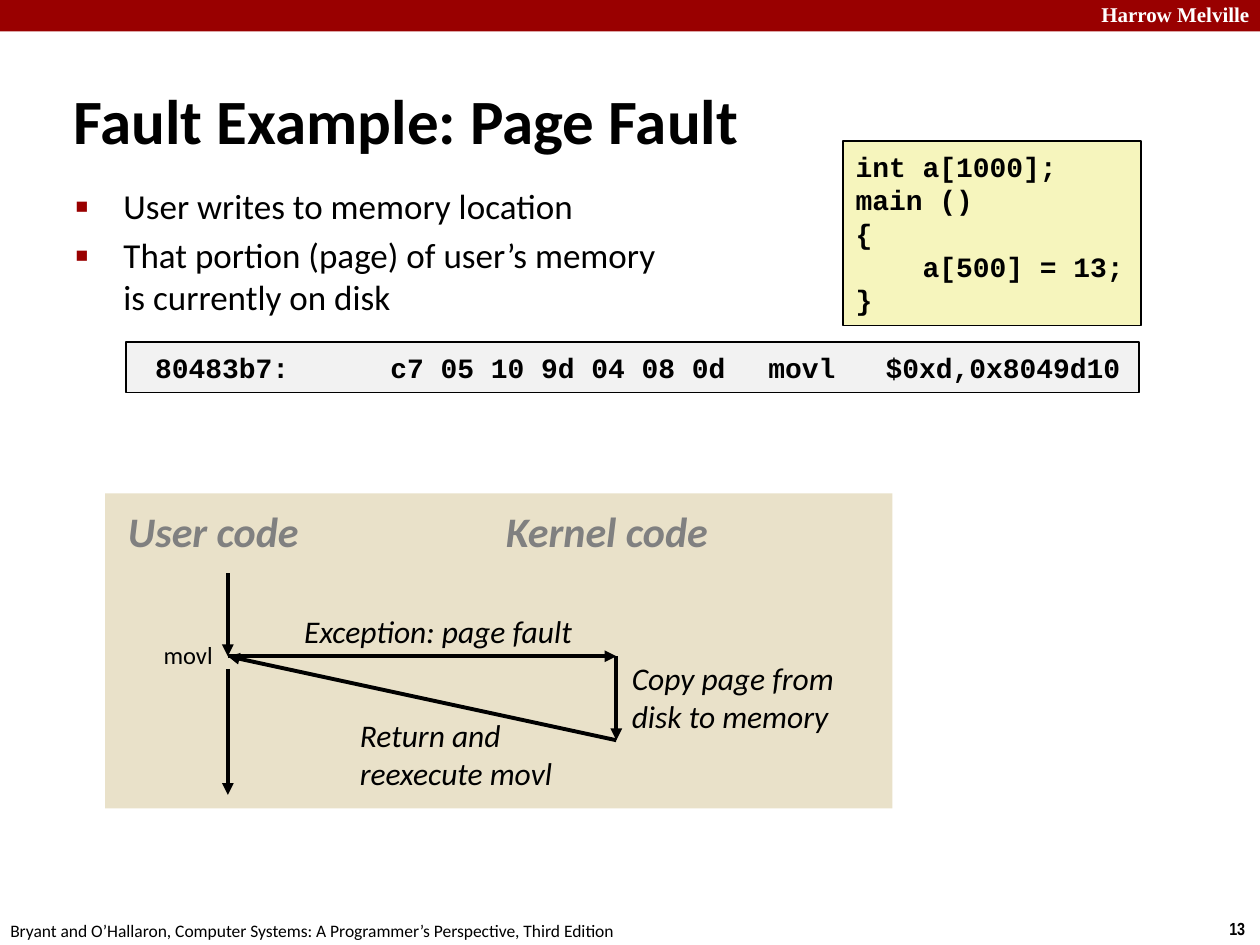
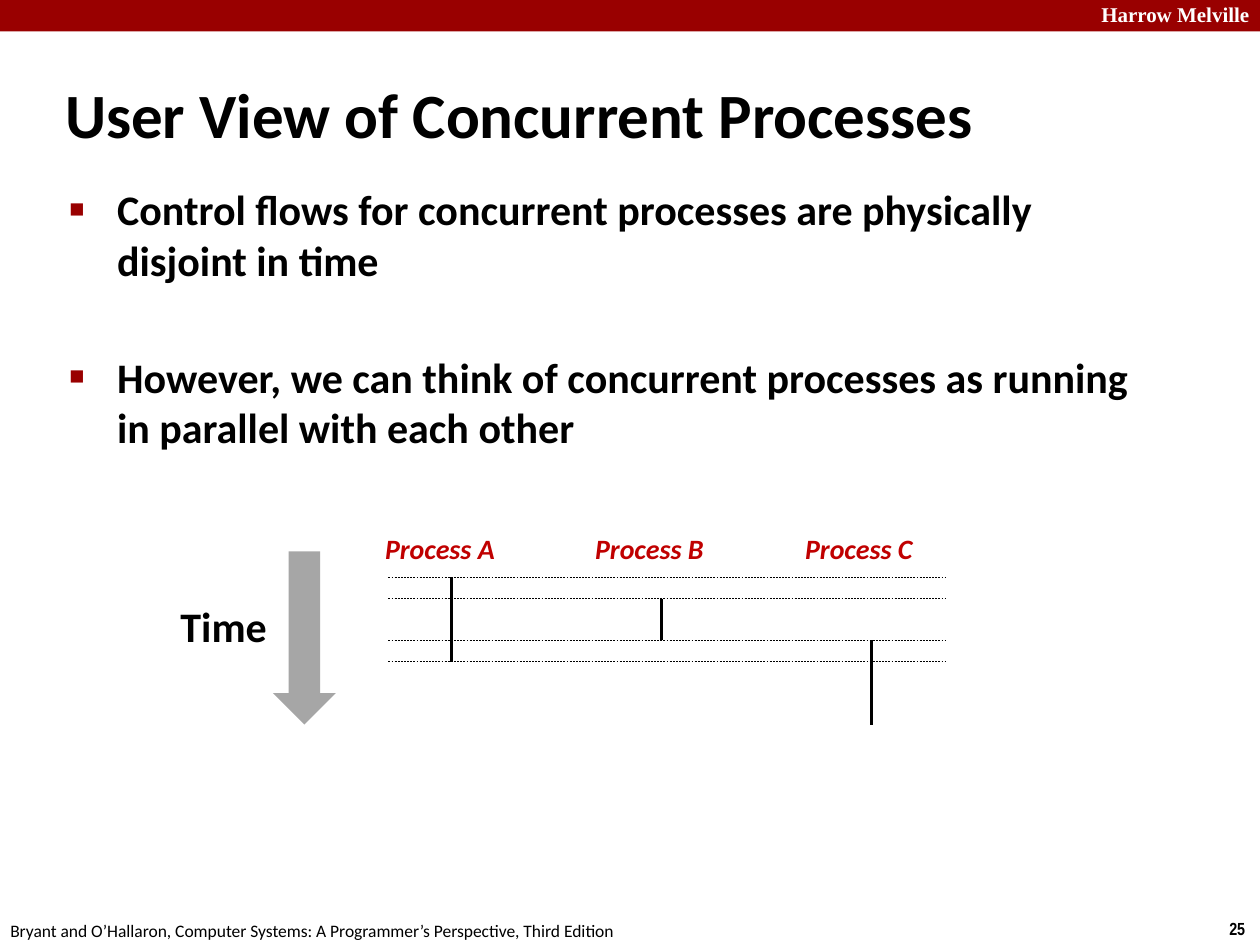
from lxml import etree
from pptx import Presentation
from pptx.dml.color import RGBColor
from pptx.enum.dml import MSO_LINE
from pptx.enum.shapes import MSO_CONNECTOR, MSO_SHAPE
from pptx.enum.text import MSO_ANCHOR, MSO_AUTO_SIZE, PP_ALIGN
from pptx.oxml.ns import qn
from pptx.util import Inches, Pt

RECT, DOWN = MSO_SHAPE.RECTANGLE, MSO_SHAPE.DOWN_ARROW
STRAIGHT, DASH = MSO_CONNECTOR.STRAIGHT, MSO_LINE.DASH
LEFT, TOP, MIDDLE = PP_ALIGN.LEFT, MSO_ANCHOR.TOP, MSO_ANCHOR.MIDDLE
FIT, FIXED = MSO_AUTO_SIZE.SHAPE_TO_FIT_TEXT, MSO_AUTO_SIZE.NONE

COLS, ROWS = 120, 90  # grid of 1/12 inch cells
SANS, MONO, SERIF, NARROW = "Calibri", "Courier New", "Times New Roman", "Arial Narrow"
BLACK, WHITE, RED, CRIMSON = "000000", "FFFFFF", "990000", "C00000"
GRAY, SILVER, PALE, SAND, CREAM = "808080", "A6A6A6", "F2F2F2", "E9E1C9", "F6F5BD"
SCHOOL = "Harrow Melville"
BOOK = ("Bryant and O’Hallaron, Computer Systems: "
        "A Programmer’s Perspective, Third Edition")


def rgb(code):
    return RGBColor.from_string(code)


def cell(n):
    return Inches(n / 12)


def sub(parent, tag, **attrs):
    return etree.SubElement(parent, qn(tag), attrs)


class Deck:
    """Holds the style and the current slide."""

    def __init__(self):
        self.prs = Presentation()
        self.prs.slide_width, self.prs.slide_height = cell(COLS), cell(ROWS)

    def page(self, num, title, area):
        """Start a slide with its band, footer and title."""
        self.slide = self.prs.slides.add_slide(self.prs.slide_layouts[1])
        self.shapes = self.slide.shapes
        self.box((0, 0, COLS, 3), RED)
        self.text((103.7, -0.4, 17.2, 3.6), SCHOOL, 12, WHITE, SERIF, bold=True, wrap=True)
        self.text((115.9, 86.8, 4.1, 3.2), str(num), 10, font=NARROW, bold=True)
        self.text((-0.2, 87, 61, 3.2), BOOK, 10)
        head = self.shapes.title
        self.place(head, area)
        head.text_frame.text = title
        self.style(head.text_frame, 36, bold=True)
        head.text_frame.vertical_anchor = MIDDLE

    def place(self, shape, area):
        shape.left, shape.top, shape.width, shape.height = map(cell, area)
        shape.text_frame.auto_size = FIXED

    def style(self, frame, size, color=BLACK, font=SANS, bold=False, ital=False):
        for par in frame.paragraphs:
            par.alignment = LEFT
            face = par.font
            face.name, face.size = font, Pt(size)
            face.bold, face.italic = bold, ital
            face.color.rgb = rgb(color)

    def text(self, area, text, size, color=BLACK, font=SANS, bold=False,
             ital=False, wrap=False):
        frame = self.shapes.add_textbox(*map(cell, area)).text_frame
        frame.word_wrap, frame.auto_size = wrap, FIT
        frame.text = text
        self.style(frame, size, color, font, bold, ital)

    def bullets(self, area, items, size, gap, bold=False):
        body = self.slide.placeholders[1]
        self.place(body, area)
        frame = body.text_frame
        frame.vertical_anchor = TOP
        frame.text = "\n".join(items)
        for i, par in enumerate(frame.paragraphs):
            props = par._p.get_or_add_pPr()
            props.set("marL", str(Inches(0.38)))
            props.set("indent", str(-Inches(0.38)))
            sub(sub(props, "a:buClr"), "a:srgbClr", val=RED)
            sub(props, "a:buSzPct", val="60000")
            sub(props, "a:buFont", typeface="Arial")
            sub(props, "a:buChar", char="■")
            par.space_before = Pt(gap if i else 0)
        self.style(frame, size, bold=bold)

    def box(self, area, fill, kind=RECT, edge=None):
        shape = self.shapes.add_shape(kind, *map(cell, area))
        shape.shadow.inherit = False
        shape.fill.solid()
        shape.fill.fore_color.rgb = rgb(fill)
        if edge:
            shape.line.color.rgb, shape.line.width = rgb(edge), Pt(1)
        else:
            shape.line.fill.background()
        return shape

    def code(self, area, text, fill, tabs=()):
        frame = self.box(area, fill, edge=BLACK).text_frame
        frame.word_wrap = False
        frame.text = text
        for par in frame.paragraphs:
            if tabs:
                stops = sub(par._p.get_or_add_pPr(), "a:tabLst")
                for pos in tabs:
                    sub(stops, "a:tab", pos=str(Inches(pos)), algn="l")
            par.line_spacing = Pt(19)
        self.style(frame, 16, font=MONO, bold=True)

    def line(self, start, end, width, arrow=False, dash=False):
        link = self.shapes.add_connector(STRAIGHT, *map(cell, (*start, *end)))
        link.line.color.rgb, link.line.width = rgb(BLACK), Pt(width)
        if dash:
            link.line.dash_style = DASH
        props = link._element.spPr
        if arrow:
            sub(props.find(qn("a:ln")), "a:tailEnd", type="triangle")
        sub(props, "a:effectLst")


def fault(deck):
    deck.page(13, "Fault Example: Page Fault", (5.8, 7.7, 103.6, 7.3))
    deck.box((10, 47, 75, 30), SAND)
    deck.bullets((6, 17, 107, 14), [
        "User writes to memory location",
        "That portion (page) of user’s memory \vis currently on disk"], 20, 4)

    # Source and machine code
    deck.code((80.3, 13.4, 28.4, 17.6),
              "int a[1000];\nmain ()\n{\n    a[500] = 13;\n}", CREAM)
    deck.code((12, 32.6, 96.5, 4.8),
              " 80483b7:\tc7 05 10 9d 04 08 0d \tmovl   $0xd,0x8049d10", PALE, (2, 5))

    # Control flow between user and kernel
    for area, name in (((11, 47.6, 19.8, 6), "User code"),
                       ((47, 47.6, 22.9, 6), "Kernel code")):
        deck.text(area, name, 24, GRAY, bold=True, ital=True)
    user, kern, call, back = 21.7, 58.7, 62.5, 70.5
    for start, end in (((user, 54.6), (user, call)),
                       ((user, call), (kern, call)),
                       ((kern, call), (kern, back)),
                       ((kern, back), (user, call)),
                       ((user, 63.7), (user, 75.7))):
        deck.line(start, end, 2.25, arrow=True)

    # Step labels
    for area, note, wrap in (
            ((27.8, 57.7, 29, 4.8), "Exception: page fault", False),
            ((59, 62.2, 25.9, 8.4), "Copy page from disk to memory", True),
            ((33.1, 67.6, 23.9, 8.4), "Return and reexecute movl", True)):
        deck.text(area, note, 18, ital=True, wrap=wrap)
    deck.text((14.4, 60.4, 7.2, 4.1), "movl", 14)


def view(deck):
    deck.page(25, "User View of Concurrent Processes", (5, 7, 111, 7.6))
    deck.bullets((5.4, 16.9, 103.7, 26.2), [
        "Control flows for concurrent processes are physically disjoint in time",
        "However, we can think of concurrent processes as running "
        "in parallel with each other"], 24, 38, bold=True)

    # Time axis
    deck.text((16, 56.6, 10.7, 6), "Time", 24, bold=True)
    deck.box((26, 52.5, 6, 16.5), SILVER, DOWN)

    # Processes: each run lasts one slice
    step, span = 20, 4
    for i, (name, runs) in enumerate((("A", (55, 59)), ("B", (57,)), ("C", (61, 65)))):
        deck.text((35.5 + i * step, 50, 13, 4.4), f"Process {name}", 16,
                  CRIMSON, bold=True, ital=True)
        x = 43 + i * step
        for y in runs:
            deck.line((x, y), (x, y + span), 2)
    for y in (55, 57, 61, 63):
        deck.line((37, y), (90, y), 0.25, dash=True)


def main():
    deck = Deck()
    fault(deck)
    view(deck)
    deck.prs.save("out.pptx")


if __name__ == "__main__":
    main()
